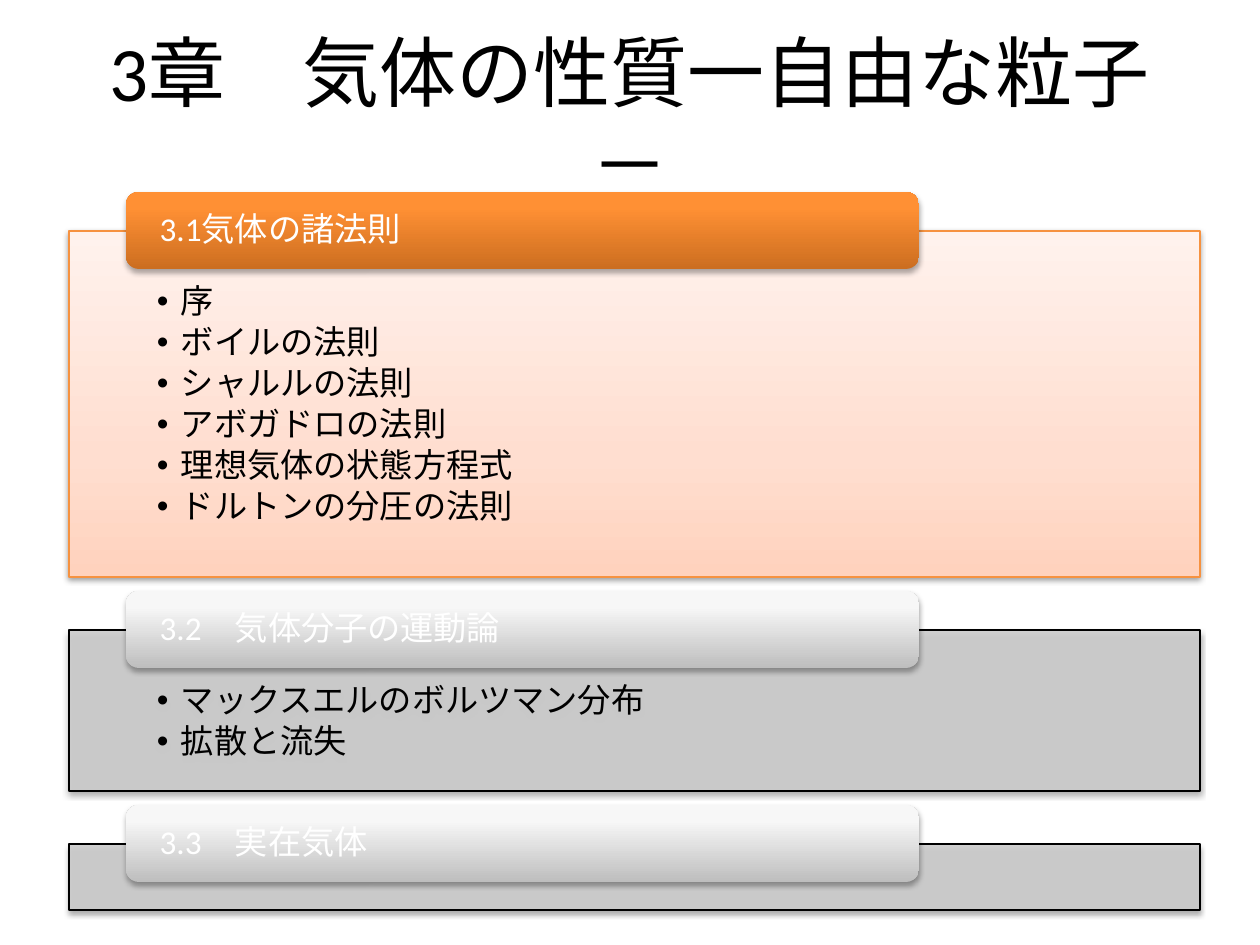
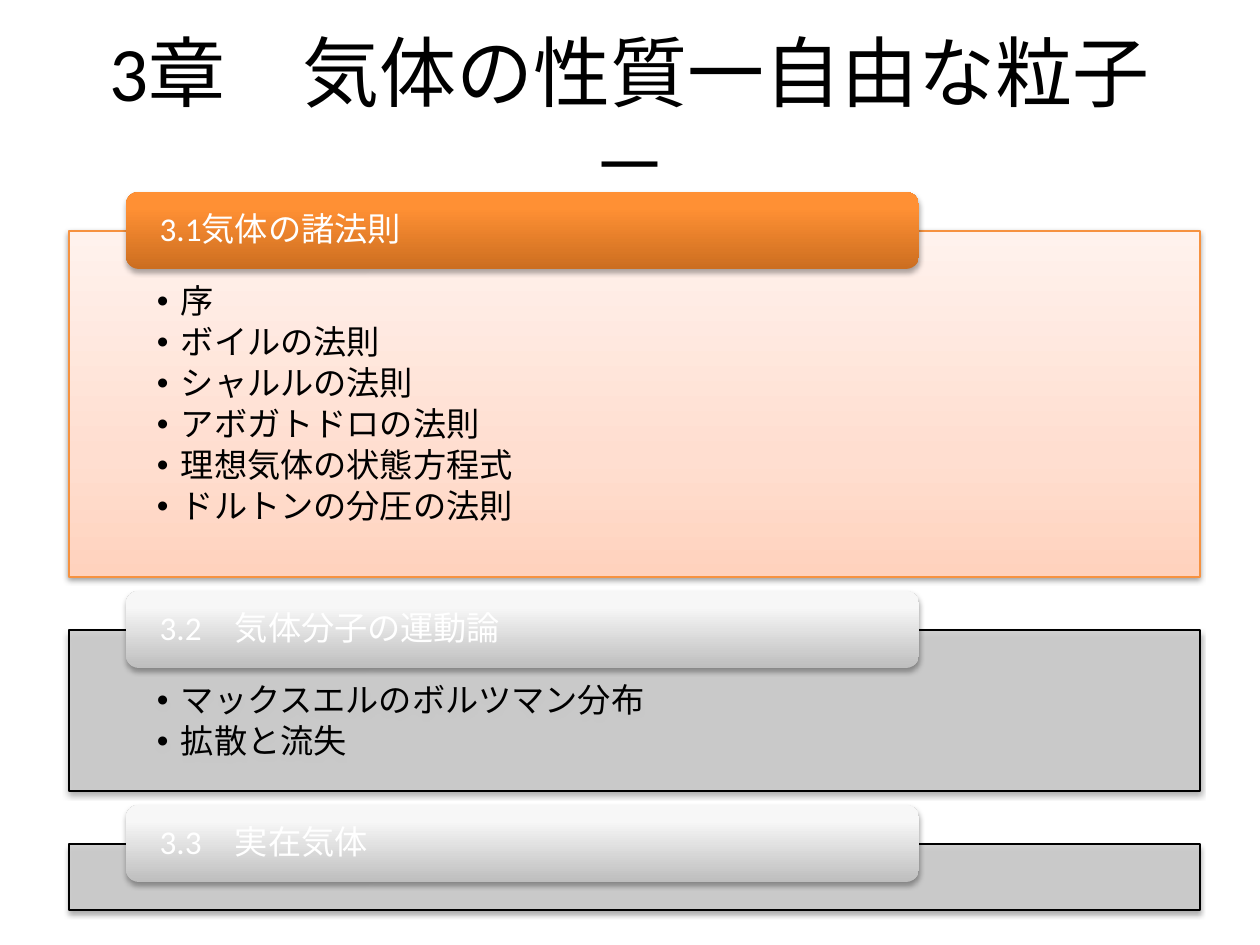
from copy import deepcopy

from lxml import etree
from pptx import Presentation
from pptx.dml.color import RGBColor
from pptx.enum import lang, shapes, text
from pptx.oxml.ns import qn
from pptx import util as u

FONT = "Calibri"
BLACK, WHITE, GREY = "000000", "FFFFFF", "CCCCCC"
PEACH = [(0, "FFD2BD"), (0.35, "FFDED0"), (1, "FFF2ED")]
ORANGE = [(0, "CC6E20"), (0.8, "FF9034"), (1, "FF9136")]
SILVER = [(0, "BEBEBE"), (0.8, "F7F7F7"), (1, "F8F8F8")]

TITLE = "3章　気体の性質一自由な粒子－"
HEADS = ["3.1気体の諸法則", "3.2　気体分子の運動論", "3.3　実在気体"]
MOTION = ["マックスエルのボルツマン分布", "拡散と流失"]
HEIGHTS = [346, 161, 66]
LEFT, TOP, WIDTH, GAP = 69, 231, 1131, 53


def px(n):
    return u.Emu(round(n * 914400 / 126))


def rgb(color):
    return RGBColor.from_string(color)


def sub(parent, tag, **attrs):
    return etree.SubElement(parent, qn(tag), {k: str(v) for k, v in attrs.items()})


def write(shape, lines, size=19, color=BLACK, align="LEFT", anchor="TOP",
          inset=None, line=None, after=None, bullet=False):
    frame = shape.text_frame
    frame.word_wrap = True
    frame.auto_size = text.MSO_AUTO_SIZE.NONE
    frame.vertical_anchor = text.MSO_ANCHOR[anchor]
    if inset:
        (frame.margin_left, frame.margin_top,
         frame.margin_right, frame.margin_bottom) = map(px, inset)
    for i, words in enumerate(lines):
        para = frame.add_paragraph() if i else frame.paragraphs[0]
        para.alignment = text.PP_ALIGN[align]
        if line:
            para.line_spacing = line
        if after:
            para.space_after = u.Pt(after)
        if bullet:
            props = para._p.get_or_add_pPr()
            props.set("marL", str(px(24)))
            props.set("indent", str(px(-24)))
            sub(props, "a:buFont", typeface="Arial")
            sub(props, "a:buChar", char="•")
        run = para.add_run()
        run.text = words
        font = run.font
        font.name, font.size = FONT, u.Pt(size)
        font.color.rgb = rgb(color)
        font.language_id = lang.MSO_LANGUAGE_ID.JAPANESE


def blend(fill, stops):
    """Fill with a gradient that runs from the bottom up."""
    fill.gradient()
    fill.gradient_angle = 90
    first = fill._fill._gradFill.gsLst
    while len(first) < len(stops):
        first.append(deepcopy(first[0]))
    for stop, (place, color) in zip(fill.gradient_stops, stops):
        stop.position = place
        stop.color.rgb = rgb(color)


def shade(shape, alpha, dist):
    """Cast a soft shadow downwards."""
    shape.shadow.inherit = False
    effects = shape._element.spPr.find(qn("a:effectLst"))
    cast = sub(effects, "a:outerShdw", blurRad=u.Pt(3.1), dist=u.Pt(dist),
               dir=5400000, rotWithShape=0)
    sub(sub(cast, "a:srgbClr", val=BLACK), "a:alpha", val=alpha * 1000)


def block(slide, kind, box, fill, line=None, alpha=35, dist=1.8):
    shape = slide.shapes.add_shape(shapes.MSO_SHAPE[kind], *map(px, box))
    if isinstance(fill, list):
        blend(shape.fill, fill)
    else:
        shape.fill.solid()
        shape.fill.fore_color.rgb = rgb(fill)
        tint = shape._element.spPr.find(qn("a:solidFill"))[0]
        sub(tint, "a:alpha", val=90000)
    if line:
        shape.line.color.rgb = rgb(line)
        shape.line.width = u.Pt(0.75)
    else:
        shape.line.fill.background()
    shade(shape, alpha, dist)
    return shape


def section(slide, box, head, items, active):
    """Panel with a list, and a heading tab across its top edge."""
    left, top, width, height = box
    if active:
        panel = block(slide, "RECTANGLE", box, PEACH, "F69240", 38, 1.6)
    else:
        panel = block(slide, "RECTANGLE", box, GREY, BLACK)
    write(panel, items, inset=(88, 54, 88, 19), line=0.9, after=2.85, bullet=True)
    tab = block(slide, "ROUNDED_RECTANGLE", (left + 57, top - 39, 793, 77),
                ORANGE if active else SILVER)
    write(tab, [head], color=WHITE, anchor="MIDDLE", inset=(30, 0, 30, 0), line=0.9)


def outline(deck, laws):
    slide = deck.slides.add_slide(deck.slide_layouts[5])
    title = slide.shapes.title
    title.left, title.top, title.width, title.height = map(px, (63, 38, 1134, 158))
    write(title, [TITLE], size=44, align="CENTER", anchor="MIDDLE")
    top = TOP
    for i, (head, items, height) in enumerate(zip(HEADS, [laws, MOTION, []], HEIGHTS)):
        section(slide, (LEFT, top, WIDTH, height), head, items, active=i == 0)
        top += height + GAP


def main():
    deck = Presentation()
    deck.slide_width, deck.slide_height = px(1260), px(945)
    for law in ["アボガドロの法則", "アボガトドロの法則"]:
        outline(deck, ["序", "ボイルの法則", "シャルルの法則", law,
                       "理想気体の状態方程式", "ドルトンの分圧の法則"])
    deck.save("out.pptx")


if __name__ == "__main__":
    main()
